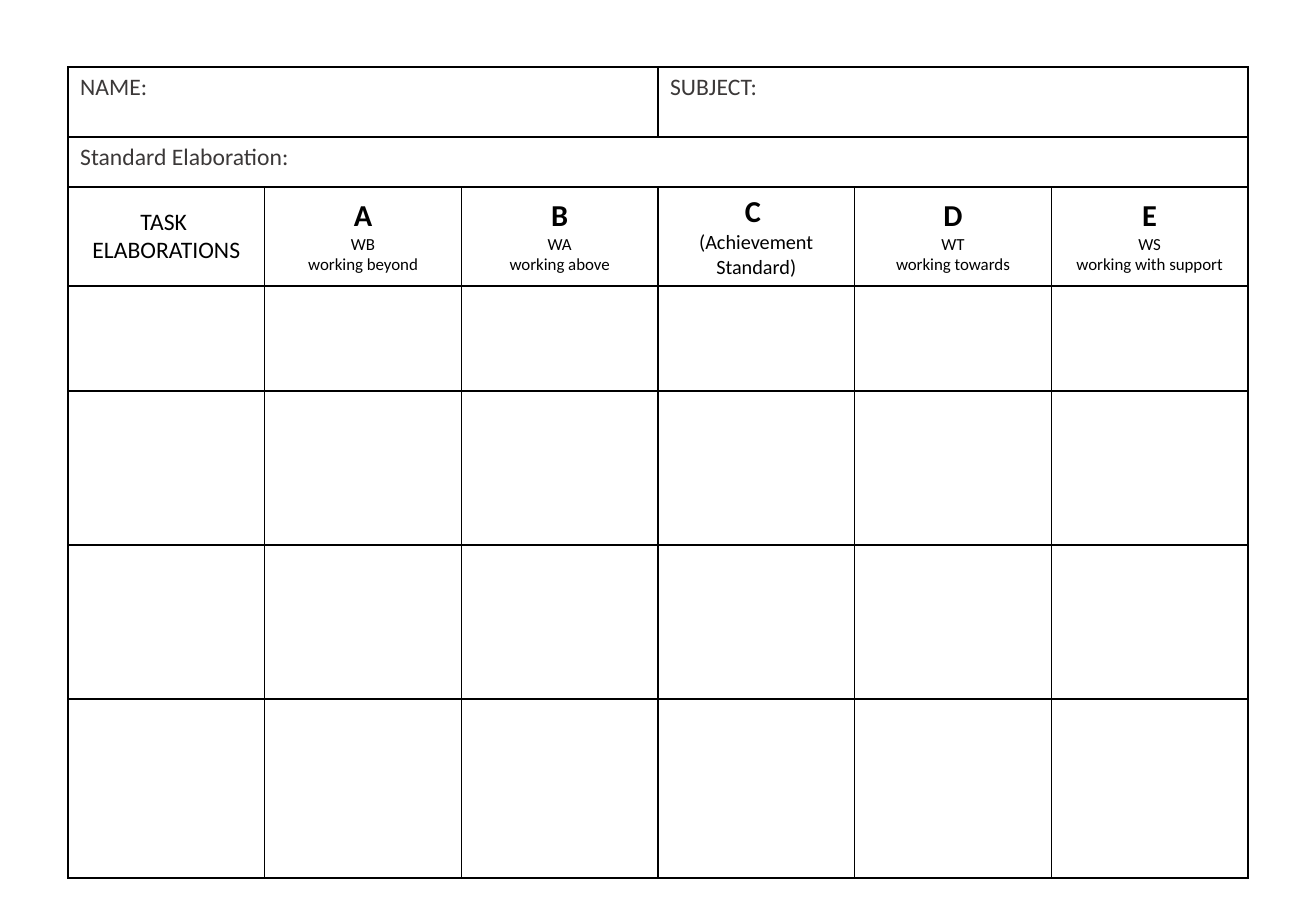
from lxml.etree import SubElement
from pptx import Presentation
from pptx.dml.color import RGBColor
from pptx.enum.text import MSO_ANCHOR as Anchor, PP_ALIGN as Align
from pptx.oxml.ns import qn
from pptx.util import Emu, Pt

EMU_PER_PX = 7526
BLACK = RGBColor(0x00, 0x00, 0x00)
CHARCOAL = RGBColor(0x3B, 0x38, 0x38)
WHITE = RGBColor(0xFF, 0xFF, 0xFF)

COLUMN_COUNT = 6
ROW_HEIGHTS = [70, 50, 99, 105, 154, 154, 179]
LABEL = {"name": "Calibri", "size": Pt(14), "bold": False}
GRADE = {"name": "Calibri", "size": Pt(18), "bold": True}
STANDARD = {"name": "Calibri", "size": Pt(12), "bold": False}
LEVEL = {"name": "Calibri", "size": Pt(10), "bold": False}

FORM_FIELDS = [
    ("NAME:", 0, 0, 2),
    ("SUBJECT:", 0, 3, 5),
    ("Standard Elaboration:", 1, 0, 5),
]
HEADINGS = [
    [("TASK ", LABEL), ("ELABORATIONS", LABEL)],
    [("A", GRADE), ("WB", LEVEL), ("working beyond", LEVEL)],
    [("B", GRADE), ("WA", LEVEL), ("working above", LEVEL)],
    [("C ", GRADE), ("(Achievement Standard)", STANDARD)],
    [("D", GRADE), ("WT", LEVEL), ("working towards", LEVEL)],
    [("E", GRADE), ("WS", LEVEL), ("working with support", LEVEL)],
]


def px(length):
    """Turn pixels into EMU."""
    return Emu(length * EMU_PER_PX)


def style_cell(cell):
    """Give a cell a thin black outline and a white fill."""
    properties = cell._tc.get_or_add_tcPr()
    for side in ("lnL", "lnR", "lnT", "lnB"):
        line = SubElement(properties, qn(f"a:{side}"), w=str(Pt(1)))
        paint = SubElement(line, qn("a:solidFill"))
        SubElement(paint, qn("a:srgbClr"), val=str(BLACK))
    cell.fill.solid()
    cell.fill.fore_color.rgb = WHITE


def write_lines(cell, lines, color, align, anchor):
    """Write each line as its own paragraph with its font format."""
    cell.vertical_anchor = anchor
    frame = cell.text_frame
    for index, (words, font_format) in enumerate(lines):
        paragraph = frame.add_paragraph() if index else frame.paragraphs[0]
        paragraph.alignment = align
        run = paragraph.add_run()
        run.text = words
        run.font.color.rgb = color
        for attribute, value in font_format.items():
            setattr(run.font, attribute, value)


def add_grid(slide, left, top, width):
    """Add the empty ruled table and return it."""
    rubric = slide.shapes.add_table(
        len(ROW_HEIGHTS), COLUMN_COUNT,
        px(left), px(top), px(width), px(sum(ROW_HEIGHTS)),
    ).table
    rubric.first_row = rubric.horz_banding = False
    for column in rubric.columns:
        column.width = px(width) // COLUMN_COUNT
    for row, height in zip(rubric.rows, ROW_HEIGHTS):
        row.height = px(height)
    for cell in rubric.iter_cells():
        style_cell(cell)
    return rubric


def fill_form_fields(rubric):
    """Merge and label the fields above the rubric."""
    for label, row, first, last in FORM_FIELDS:
        field = rubric.cell(row, first)
        field.merge(rubric.cell(row, last))
        write_lines(field, [(label, LABEL)], CHARCOAL, Align.LEFT, Anchor.TOP)


def fill_headings(rubric):
    """Write the task heading and the grade headings."""
    for column, lines in enumerate(HEADINGS):
        write_lines(rubric.cell(2, column), lines, BLACK, Align.CENTER, Anchor.MIDDLE)


def main():
    """Build the rubric slide and save it."""
    deck = Presentation()
    deck.slide_width, deck.slide_height = px(1316), px(911)
    slide = deck.slides.add_slide(deck.slide_layouts[6])
    rubric = add_grid(slide, 68, 67, 1180)
    fill_form_fields(rubric)
    fill_headings(rubric)
    deck.save("out.pptx")


if __name__ == "__main__":
    main()
